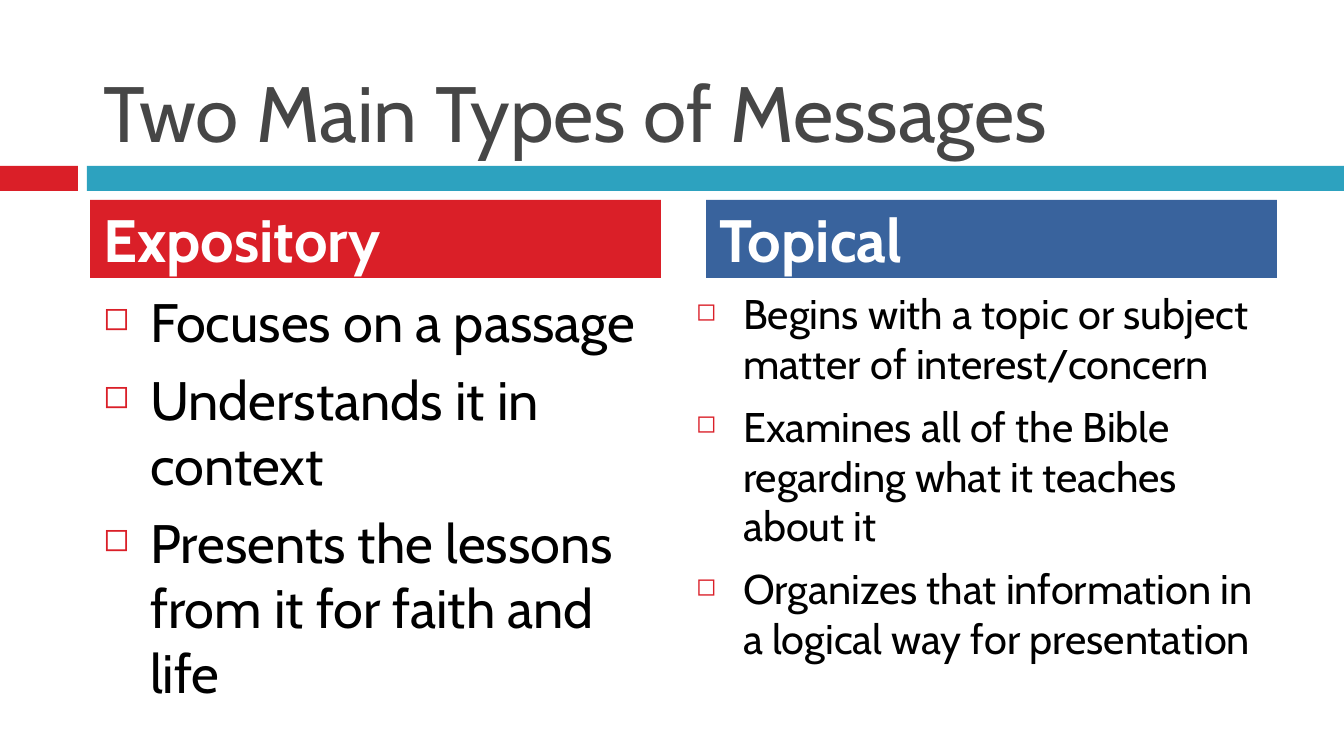
import pptx
import pptx.util
import pptx.dml.color
import pptx.enum.shapes
import pptx.enum.text
import pptx.oxml.ns
import lxml.etree

FONT = "Cabin"
RED, TEAL, BLUE = "DA1F28", "2DA2BF", "39639D"
GREY, BLACK, WHITE = "464646", "000000", "FFFFFF"
EMU_PER_PX = 914400 / 134.4
INDENT = 47
SPACE_BEFORE = 7

TITLE = "Two Main Types of Messages"
BARS = [((0, 166, 78, 25), RED), ((87, 166, 1257, 25), TEAL)]
COLUMNS = [
    {
        "heading": "Expository", "fill": RED, "left": 90,
        "body": (90, 282, 571, 444), "size": 29,
        "points": [
            "Focuses on a passage",
            "Understands it in context",
            "Presents the lessons from it for faith and life",
        ],
    },
    {
        "heading": "Topical", "fill": BLUE, "left": 706,
        "body": (683, 282, 594, 421), "size": 22.2,
        "points": [
            "Begins with a topic or subject matter of interest/concern",
            "Examines all of the Bible regarding what it teaches about it",
            "Organizes that information in a logical way for presentation",
        ],
    },
]


def px(n):
    return pptx.util.Emu(round(n * EMU_PER_PX))


def color(value):
    return pptx.dml.color.RGBColor.from_string(value)


def add_rect(s, box, fill):
    sp = s.shapes.add_shape(pptx.enum.shapes.MSO_SHAPE.RECTANGLE, *map(px, box))
    sp.shadow.inherit = False
    sp.fill.solid()
    sp.fill.fore_color.rgb = color(fill)
    sp.line.fill.background()
    return sp


def add_bullet(p):
    """Give the paragraph a hanging indent and a small red hollow square."""
    pPr = p._p.get_or_add_pPr()
    pPr.set("marL", str(px(INDENT)))
    pPr.set("indent", str(-px(INDENT)))

    def child(parent, tag, **attrs):
        return lxml.etree.SubElement(parent, pptx.oxml.ns.qn(tag), **attrs)

    child(child(pPr, "a:buClr"), "a:srgbClr", val=RED)
    child(pPr, "a:buSzPct", val="60000")
    child(pPr, "a:buChar", char="◻")


def write(sp, lines, size, text_color, anchor, bold=False, bullets=False):
    tf = sp.text_frame
    tf.word_wrap = True
    tf.vertical_anchor = anchor
    for i, line in enumerate(lines):
        p = tf.paragraphs[0] if i == 0 else tf.add_paragraph()
        p.alignment = pptx.enum.text.PP_ALIGN.LEFT
        if bullets:
            p.space_before = pptx.util.Pt(SPACE_BEFORE)
            add_bullet(p)
        r = p.add_run()
        r.text = line
        r.font.name = FONT
        r.font.size = pptx.util.Pt(size)
        r.font.bold = bold
        r.font.color.rgb = color(text_color)


prs = pptx.Presentation()
prs.slide_width, prs.slide_height = px(1344), px(756)
s = prs.slides.add_slide(prs.slide_layouts[6])
anchors = pptx.enum.text.MSO_ANCHOR

for box, fill in BARS:
    add_rect(s, box, fill)

title = s.shapes.add_textbox(*map(px, (90, 17, 1199, 148)))
write(title, [TITLE], 42, GREY, anchors.BOTTOM)

for column in COLUMNS:
    body = s.shapes.add_textbox(*map(px, column["body"]))
    write(body, column["points"], column["size"], BLACK, anchors.TOP, bullets=True)
    heading = add_rect(s, (column["left"], 200, 571, 78), column["fill"])
    write(heading, [column["heading"]], 32, WHITE, anchors.MIDDLE, bold=True)

prs.save("out.pptx")
